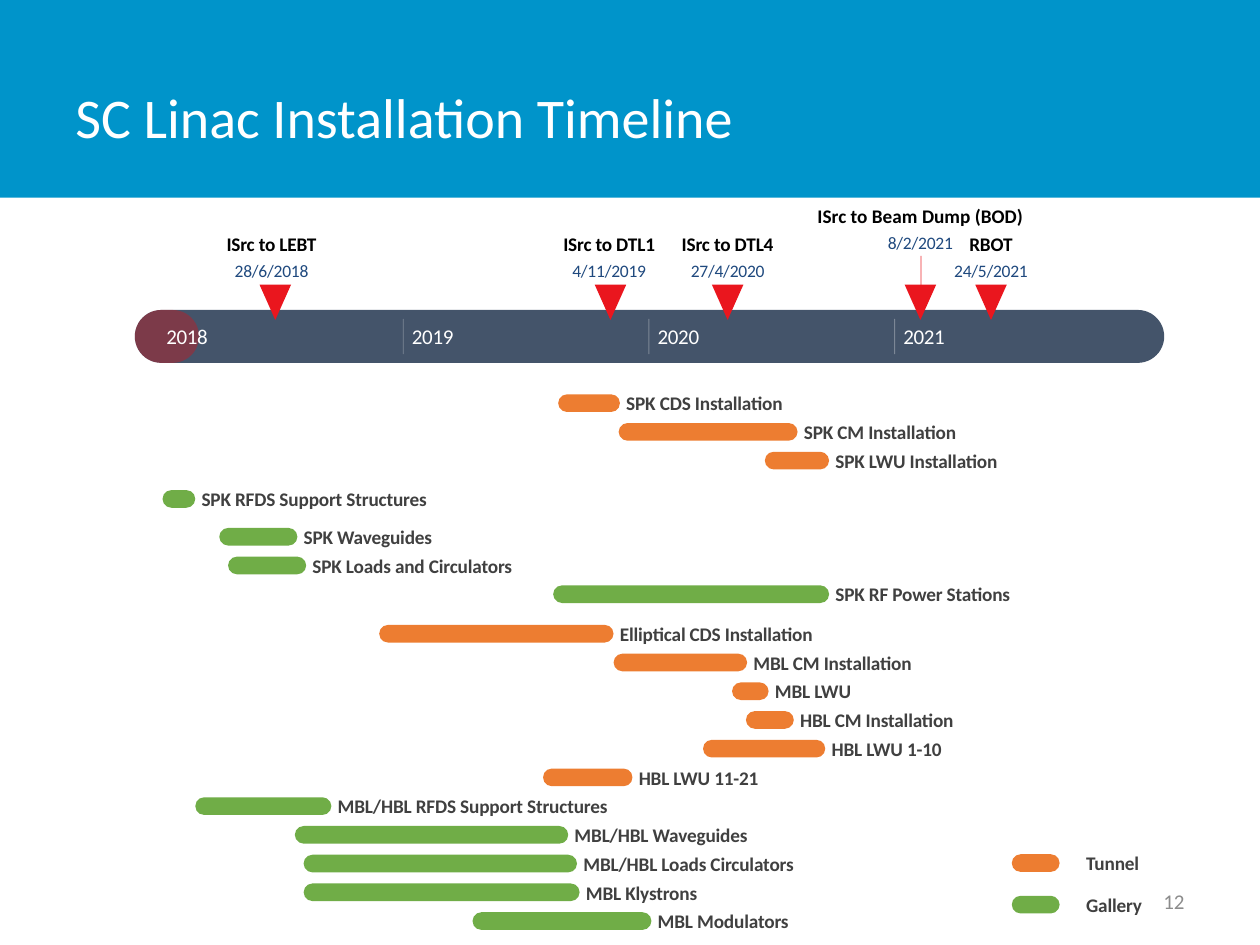
from dataclasses import dataclass

import lxml.etree
import pptx
import pptx.dml.color
import pptx.enum.shapes
import pptx.enum.text
import pptx.oxml.ns
import pptx.shapes.autoshape
import pptx.shapes.connector
import pptx.slide
import pptx.util

RGBColor = pptx.dml.color.RGBColor
Shapes = pptx.enum.shapes.MSO_SHAPE
Align = pptx.enum.text.PP_ALIGN
qn = pptx.oxml.ns.qn

BLUE = RGBColor(0x00, 0x94, 0xCA)
SLATE = RGBColor(0x44, 0x54, 0x6A)
ELAPSED = RGBColor(0xFF, 0x00, 0x00)
MARKER = RGBColor(0xEA, 0x16, 0x1E)
TUNNEL = RGBColor(0xED, 0x7D, 0x31)
GALLERY = RGBColor(0x70, 0xAD, 0x47)
NAVY = RGBColor(0x1F, 0x49, 0x7E)
DARK = RGBColor(0x40, 0x40, 0x40)
GRAY = RGBColor(0x8C, 0x8C, 0x8C)
BLACK = RGBColor(0x00, 0x00, 0x00)
WHITE = RGBColor(0xFF, 0xFF, 0xFF)

FONT = "Calibri"
SLIDE_WIDTH = pptx.util.Inches(10)
SLIDE_HEIGHT = pptx.util.Inches(7.5)
COLUMN = SLIDE_WIDTH / 100
ROW = SLIDE_HEIGHT / 75
BAR_PITCH = 2.28
BAR_HEIGHT = 1.4
YEAR_COLUMNS = 19.5


@dataclass
class Task:
    name: str
    left: float
    width: float
    label_width: float
    color: RGBColor


@dataclass
class Milestone:
    name: str
    date: str
    center: float
    name_width: float
    date_width: float = 6.1
    shift: float = 0
    lift: float = 0


@dataclass
class Group:
    top: float
    tasks: list[Task]


MILESTONES = [
    Milestone("ISrc to LEBT", "28/6/2018", 21.85, 7.3, shift=-0.3),
    Milestone("ISrc to DTL1", "4/11/2019", 48.45, 7.5, shift=-0.1),
    Milestone("ISrc to DTL4", "27/4/2020", 57.75, 7.5),
    Milestone("ISrc to Beam Dump (BOD)", "8/2/2021", 73.05, 16.4, 5.4, lift=2.2),
    Milestone("RBOT", "24/5/2021", 78.65, 3.6),
]

GROUPS = [
    Group(31.3, [
        Task("SPK CDS Installation", 44.3, 4.9, 12.8, TUNNEL),
        Task("SPK CM Installation", 49.1, 14.2, 12.4, TUNNEL),
        Task("SPK LWU Installation", 60.7, 5.1, 13.2, TUNNEL),
    ]),
    Group(38.9, [Task("SPK RFDS Support Structures", 12.9, 2.6, 18.3, GALLERY)]),
    Group(41.9, [
        Task("SPK Waveguides", 17.4, 6.2, 10.4, GALLERY),
        Task("SPK Loads and Circulators", 18.1, 6.2, 16.2, GALLERY),
        Task("SPK RF Power Stations", 43.9, 21.9, 14.2, GALLERY),
    ]),
    Group(49.6, [
        Task("Elliptical CDS Installation", 30.1, 18.6, 15.7, TUNNEL),
        Task("MBL CM Installation", 48.7, 10.6, 12.9, TUNNEL),
        Task("MBL LWU", 58.1, 2.9, 6.2, TUNNEL),
        Task("HBL CM Installation", 59.2, 3.8, 12.5, TUNNEL),
        Task("HBL LWU 1-10", 55.8, 9.7, 9, TUNNEL),
        Task("HBL LWU 11-21", 43.1, 7.1, 9.7, TUNNEL),
        Task("MBL/HBL RFDS Support Structures", 15.5, 10.8, 21.9, GALLERY),
        Task("MBL/HBL Waveguides", 23.4, 21.7, 14.4, GALLERY),
        Task("MBL/HBL Loads Circulators", 24.1, 21.7, 17.1, GALLERY),
        Task("MBL Klystrons", 24.1, 21.9, 9, GALLERY),
        Task("MBL Modulators", 37.5, 14.2, 10.7, GALLERY),
    ]),
]

LEGEND = [
    Group(67.8, [Task("Tunnel", 80.3, 3.8, 8.8, TUNNEL)]),
    Group(71.1, [Task("Gallery", 80.3, 3.8, 8.8, GALLERY)]),
]


def grid(left: float, top: float, width: float, height: float) -> list[int]:
    return [round(left * COLUMN), round(top * ROW),
            round(width * COLUMN), round(height * ROW)]


def set_opacity(holder: lxml.etree._Element, percent: int) -> None:
    color = next(holder.iter(qn("a:srgbClr")))
    lxml.etree.SubElement(color, qn("a:alpha"), val=str(percent * 1000))


def add_block(page: pptx.slide.Slide, kind: Shapes, area: list[int],
              color: RGBColor) -> pptx.shapes.autoshape.Shape:
    block = page.shapes.add_shape(kind, *area)
    block.shadow.inherit = False
    block.fill.solid()
    block.fill.fore_color.rgb = color
    block.line.fill.background()
    if kind == Shapes.ROUNDED_RECTANGLE:
        block.adjustments[0] = 0.5
    return block


def add_text(page: pptx.slide.Slide, text: str, area: list[int], size: float,
             color: RGBColor, bold: bool = False, align: Align = Align.LEFT,
             inset: bool = False, spacing: int = -10) -> None:
    box = page.shapes.add_textbox(*area)
    frame = box.text_frame
    frame.text = text
    frame.word_wrap = inset
    frame.vertical_anchor = pptx.enum.text.MSO_ANCHOR.MIDDLE
    if not inset:
        frame.margin_left = frame.margin_right = 0
        frame.margin_top = frame.margin_bottom = 0
    para = frame.paragraphs[0]
    para.alignment = align
    span = para.runs[0]
    span.font.name = FONT
    span.font.size = pptx.util.Pt(size)
    span.font.bold = bold
    span.font.color.rgb = color
    if spacing:
        span.font._element.set("spc", str(spacing))


def add_vertical(page: pptx.slide.Slide, column: float, top: float, bottom: float,
                 color: RGBColor, weight: float, opacity: int) -> None:
    left, start, _, drop = grid(column, top, 0, bottom - top)
    line = page.shapes.add_connector(
        pptx.enum.shapes.MSO_CONNECTOR.STRAIGHT, left, start, left, start + drop)
    line.line.color.rgb = color
    line.line.width = pptx.util.Pt(weight)
    properties = line._element.spPr
    set_opacity(properties, opacity)
    lxml.etree.SubElement(properties, qn("a:effectLst"))


def add_scale(page: pptx.slide.Slide) -> None:
    add_block(page, Shapes.ROUNDED_RECTANGLE, grid(10.7, 24.6, 81.7, 4.2), SLATE)
    elapsed = add_block(page, Shapes.ROUNDED_RECTANGLE, grid(10.7, 24.6, 5.1, 4.2), ELAPSED)
    set_opacity(elapsed._element.spPr, 30)
    add_text(page, "2018", grid(13.2, 25.7, 3.3, 2), 12, WHITE, spacing=-20)
    for index, year in enumerate(("2019", "2020", "2021")):
        column = 32 + index * YEAR_COLUMNS
        add_vertical(page, column, 25.3, 28.1, WHITE, 0.5, 30)
        add_text(page, year, grid(column + 0.7, 25.7, 3.3, 2), 12, WHITE, spacing=-20)


def add_milestone(page: pptx.slide.Slide, event: Milestone) -> None:
    center = event.center + event.shift
    add_text(page, event.name,
             grid(center - event.name_width / 2, 18.4 - event.lift, event.name_width, 1.9),
             11, BLACK, True, Align.CENTER, spacing=0 if event.lift else -10)
    add_text(page, event.date,
             grid(center - event.date_width / 2, 20.6 - event.lift, event.date_width, 1.7),
             10, NAVY, align=Align.CENTER)
    marker = add_block(page, Shapes.ISOSCELES_TRIANGLE,
                       grid(event.center - 1.25, 22.6, 2.5, 2.8), MARKER)
    marker._element.spPr.get_or_add_xfrm().set("flipV", "1")


def add_group(page: pptx.slide.Slide, group: Group, gap: float) -> None:
    for index, task in enumerate(group.tasks):
        top = group.top + index * BAR_PITCH
        add_block(page, Shapes.ROUNDED_RECTANGLE,
                  grid(task.left, top, task.width, BAR_HEIGHT), task.color)
        add_text(page, task.name,
                 grid(task.left + task.width + gap, top - 0.25, task.label_width, 1.9),
                 11, DARK, True)


def main() -> None:
    deck = pptx.Presentation()
    deck.slide_width, deck.slide_height = SLIDE_WIDTH, SLIDE_HEIGHT
    page = deck.slides.add_slide(deck.slide_layouts[6])
    add_block(page, Shapes.RECTANGLE, grid(0, 0, 100, 15.7), BLUE)
    add_text(page, "SC Linac Installation Timeline", grid(5, 3, 78.1, 12.5), 32, WHITE,
             inset=True, spacing=0)
    add_text(page, "12", grid(71.7, 69.5, 23.3, 4), 12, GRAY, align=Align.RIGHT,
             inset=True, spacing=0)
    add_vertical(page, 73.1, 20.3, 23.9, MARKER, 0.75, 50)
    add_scale(page)
    for event in MILESTONES:
        add_milestone(page, event)
    for group in GROUPS:
        add_group(page, group, 0.5)
    for group in LEGEND:
        add_group(page, group, 2.1)
    deck.save("out.pptx")


if __name__ == "__main__":
    main()
